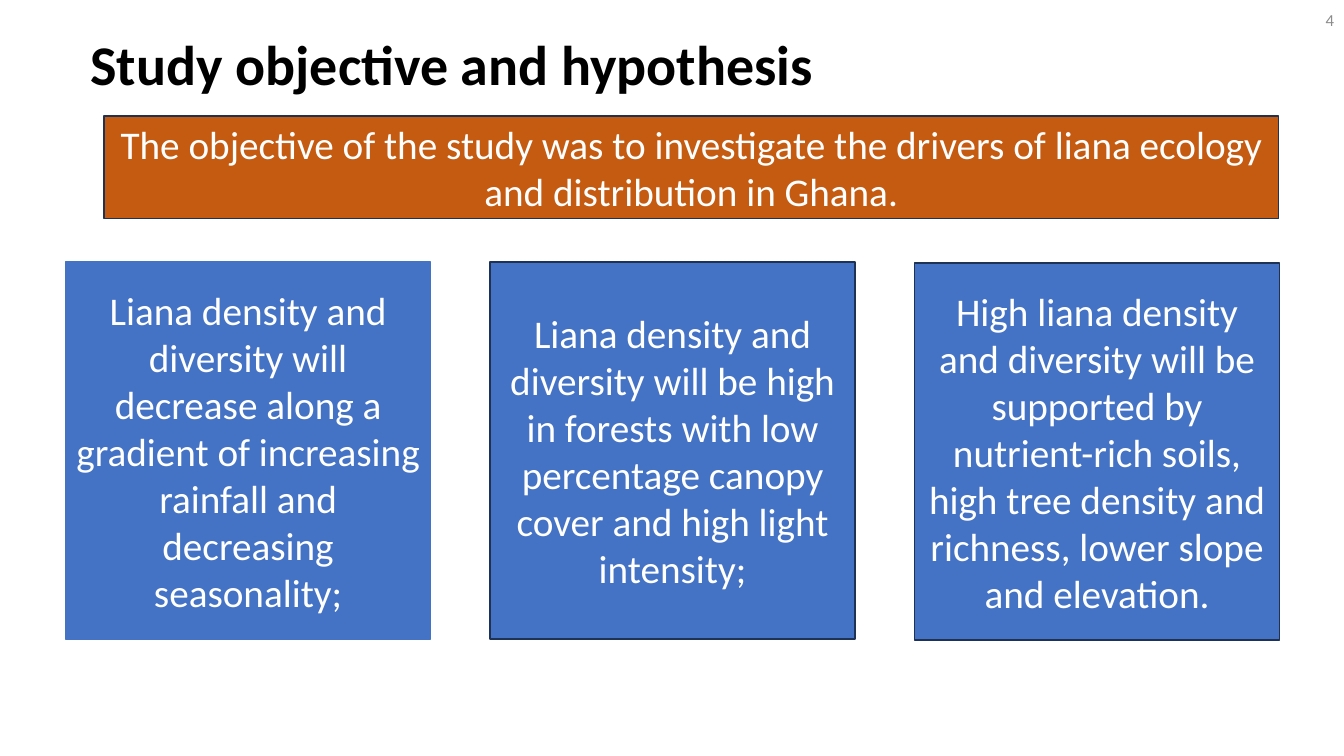
from dataclasses import dataclass

from pptx import Presentation
from pptx.dml.color import RGBColor
from pptx.enum.shapes import MSO_SHAPE
from pptx.enum.text import MSO_ANCHOR, PP_ALIGN
from pptx.slide import Slide
from pptx.text.text import TextFrame
from pptx.util import Inches, Pt

SLIDE_WIDTH, SLIDE_HEIGHT = 13.33, 7.5
COLUMN_LEFT, COLUMN_STEP, COLUMN_WIDTH = 0.65, 4.21, 3.62
ROW_TOP, ROW_HEIGHT = 2.6, 3.74
COLORS = {
    "black": "000000",
    "white": "FFFFFF",
    "gray": "8C8C8C",
    "orange": "C55A11",
    "blue": "4472C4",
    "navy": "1E3256",
}


@dataclass(frozen=True)
class Area:
    left: float
    top: float
    width: float
    height: float

    def lengths(self) -> list[int]:
        return [Inches(n) for n in (self.left, self.top, self.width, self.height)]


@dataclass(frozen=True)
class Label:
    text: str
    area: Area
    size: int
    color: str
    alignment: PP_ALIGN
    bold: bool = False
    line_spacing: float = 1.0


@dataclass(frozen=True)
class Panel:
    text: str
    area: Area
    fill: str
    outline: str = "navy"


@dataclass(frozen=True)
class Hypothesis:
    text: str
    outline: str = "navy"
    drop: float = 0.0


LABELS = [
    Label("Study objective and hypothesis", Area(0.8, -0.06, 11.5, 1.45),
          40, "black", PP_ALIGN.LEFT, True, 0.9),
    Label("4", Area(SLIDE_WIDTH - 3, 0, 3, 0.4), 12, "gray", PP_ALIGN.RIGHT),
]
OBJECTIVE = Panel(
    "The objective of the study was to investigate the drivers of liana ecology "
    "and distribution in Ghana.",
    Area(1.03, 1.15, 11.65, 1.02), "orange")
HYPOTHESES = [
    Hypothesis("Liana density and diversity will decrease along a gradient of "
               "increasing rainfall and decreasing seasonality;", outline="blue"),
    Hypothesis("Liana density and diversity will be high in forests with low "
               "percentage canopy cover and high light intensity;"),
    Hypothesis("High liana density and diversity will be supported by nutrient-rich "
               "soils, high tree density and richness, lower slope and elevation.",
               drop=0.01),
]


def color(name: str) -> RGBColor:
    return RGBColor.from_string(COLORS[name])


def write(frame: TextFrame, label: Label) -> None:
    frame.word_wrap = True
    frame.vertical_anchor = MSO_ANCHOR.MIDDLE
    paragraph = frame.paragraphs[0]
    paragraph.text = label.text
    paragraph.alignment = label.alignment
    paragraph.line_spacing = label.line_spacing
    paragraph.font.name = "Calibri"
    paragraph.font.size = Pt(label.size)
    paragraph.font.bold = label.bold
    paragraph.font.color.rgb = color(label.color)


def add_label(slide: Slide, label: Label) -> None:
    write(slide.shapes.add_textbox(*label.area.lengths()).text_frame, label)


def add_panel(slide: Slide, panel: Panel) -> None:
    shape = slide.shapes.add_shape(MSO_SHAPE.RECTANGLE, *panel.area.lengths())
    shape.shadow.inherit = False
    shape.fill.solid()
    shape.fill.fore_color.rgb = color(panel.fill)
    shape.line.color.rgb = color(panel.outline)
    shape.line.width = Pt(1)
    write(shape.text_frame,
          Label(panel.text, panel.area, 28, "white", PP_ALIGN.CENTER))


def main() -> None:
    presentation = Presentation()
    presentation.slide_width = Inches(SLIDE_WIDTH)
    presentation.slide_height = Inches(SLIDE_HEIGHT)
    slide = presentation.slides.add_slide(presentation.slide_layouts[6])
    title, page_number = LABELS
    add_label(slide, title)
    add_panel(slide, OBJECTIVE)
    for column, hypothesis in enumerate(HYPOTHESES):
        area = Area(COLUMN_LEFT + column * COLUMN_STEP, ROW_TOP + hypothesis.drop,
                    COLUMN_WIDTH, ROW_HEIGHT)
        add_panel(slide, Panel(hypothesis.text, area, "blue", hypothesis.outline))
    add_label(slide, page_number)
    presentation.save("out.pptx")


if __name__ == "__main__":
    main()
